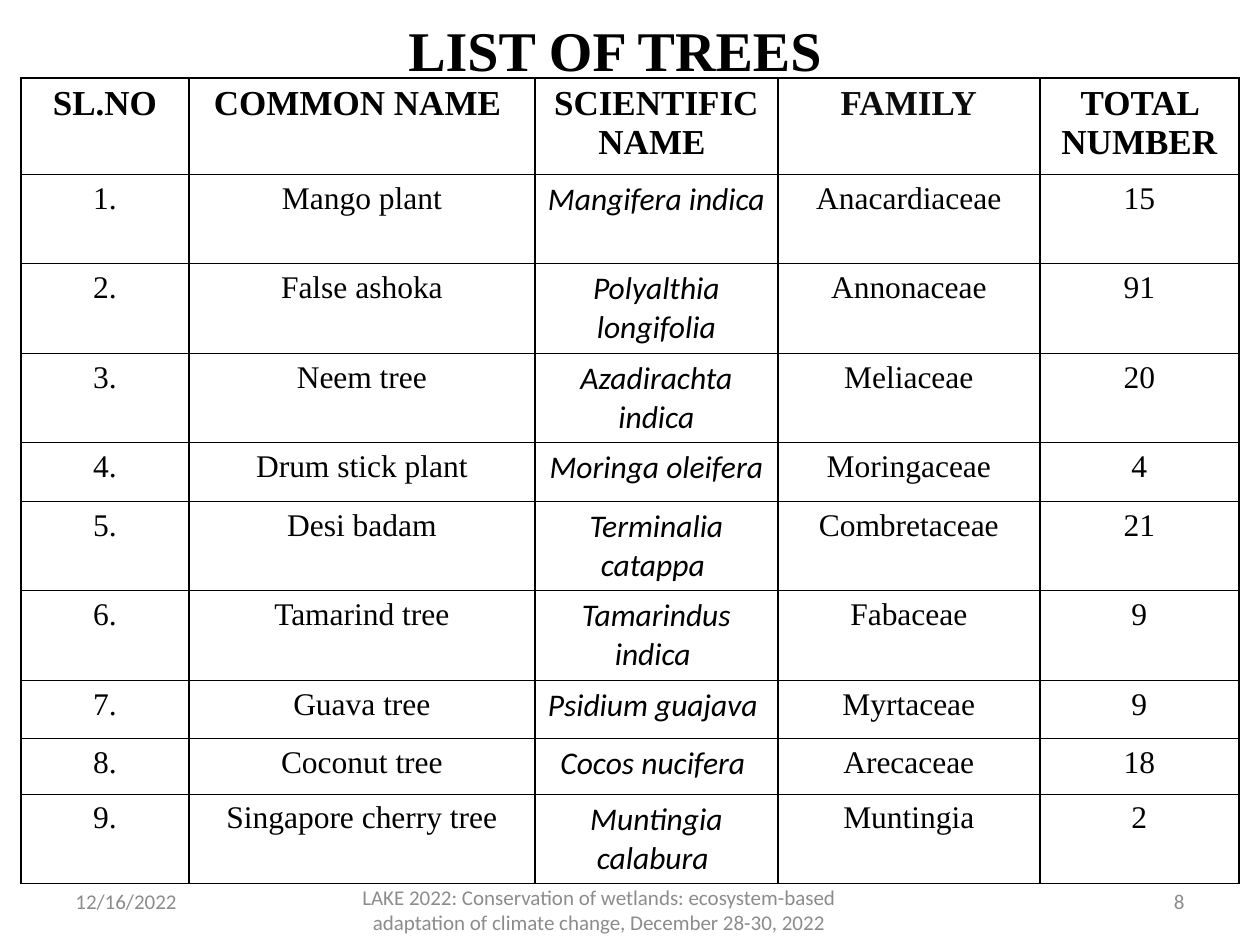
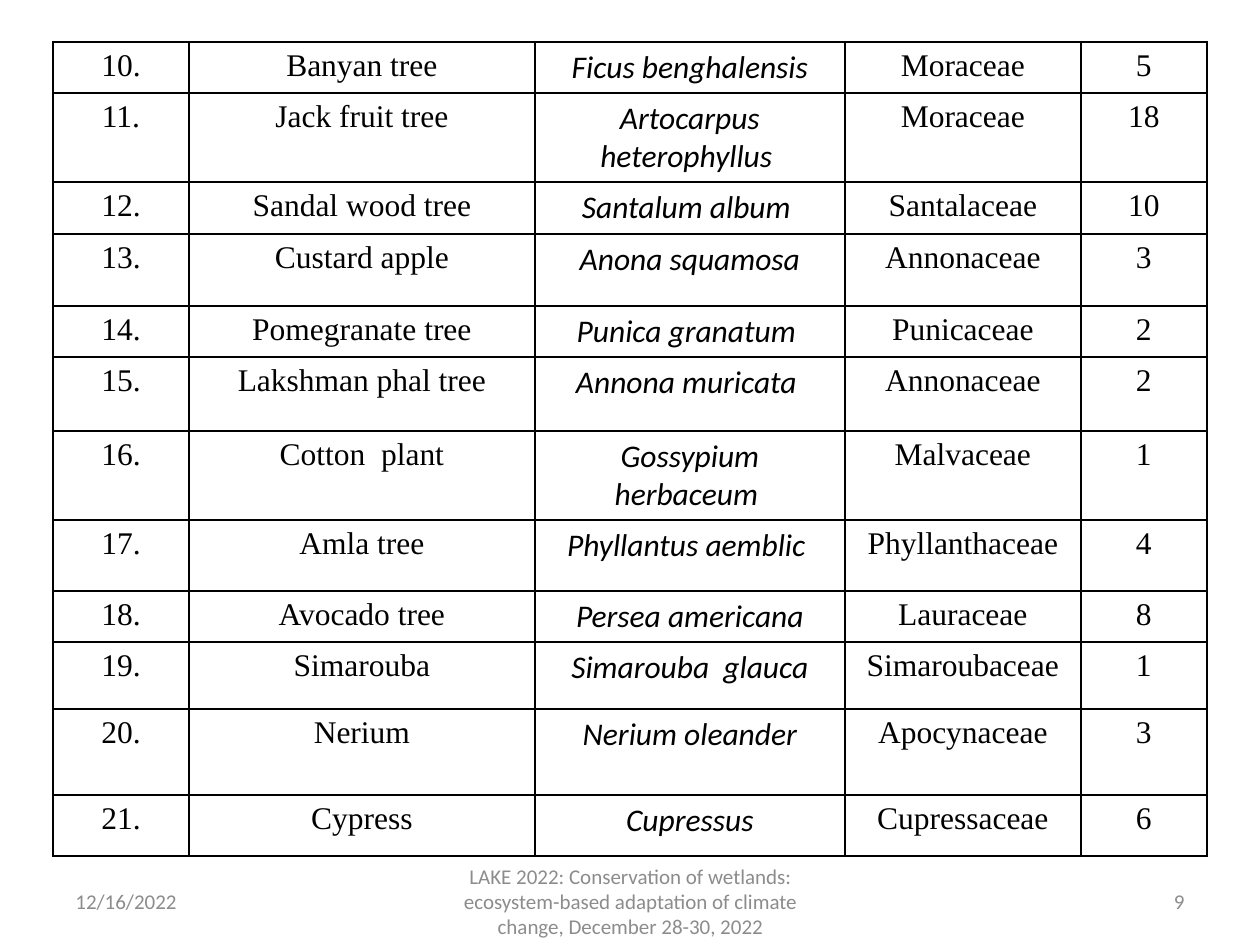
"""Build the two slides that list trees, as bordered tables with footers."""
from dataclasses import dataclass

from lxml import etree
from pptx import Presentation
from pptx import util as u
from pptx.dml import color
from pptx.enum import text
from pptx.oxml import ns


@dataclass(frozen=True)
class Theme:
    """Fonts, colours and type sizes that the slides share."""
    serif: str = "Times New Roman"
    sans: str = "Calibri"
    ink: str = "000000"
    soft_ink: str = "0D0D0D"
    muted: str = "8C8C8C"
    title: int = 32
    header: int = 20
    body: int = 18
    footer: int = 12
    border: int = 1


THEME = Theme()
PX_PER_INCH = 126
ALIGN = text.PP_ALIGN
EVENT = ("LAKE 2022: Conservation of wetlands: ecosystem-based adaptation "
         "of climate change, December 28-30, 2022")
DATE = "12/16/2022"
FAMILY = "FAMILY"
HEADERS = ("SL.NO", "COMMON NAME ", "SCIENTIFIC NAME ", FAMILY, "TOTAL NUMBER")
SCIENTIFIC_COLUMN = 2

TREES = [
    ("Mango plant", "Mangifera indica ", "Anacardiaceae", 15),
    ("False ashoka", "Polyalthia longifolia", "Annonaceae", 91),
    ("Neem tree", "Azadirachta indica", "Meliaceae", 20),
    ("Drum stick plant", "Moringa oleifera", "Moringaceae", 4),
    ("Desi badam", "Terminalia catappa ", "Combretaceae", 21),
    ("Tamarind tree", "Tamarindus indica ", "Fabaceae", 9),
    ("Guava tree", "Psidium guajava ", "Myrtaceae", 9),
    ("Coconut tree", "Cocos nucifera ", "Arecaceae", 18),
    ("Singapore cherry tree", "Muntingia calabura ", "Muntingia", 2),
    ("Banyan tree", "Ficus benghalensis", "Moraceae", 5),
    ("Jack fruit tree", "Artocarpus heterophyllus ", "Moraceae", 18),
    ("Sandal wood tree", "Santalum album ", "Santalaceae", 10),
    ("Custard apple", "Anona squamosa", "Annonaceae", 3),
    ("Pomegranate tree", "Punica granatum ", "Punicaceae", 2),
    ("Lakshman phal tree", "Annona muricata ", "Annonaceae", 2),
    ("Cotton  plant", "Gossypium herbaceum ", "Malvaceae", 1),
    ("Amla tree", "Phyllantus aemblic ", "Phyllanthaceae", 4),
    ("Avocado tree", "Persea americana", "Lauraceae", 8),
    ("Simarouba", "Simarouba  glauca", "Simaroubaceae", 1),
    ("Nerium", "Nerium oleander", "Apocynaceae", 3),
    ("Cypress", "Cupressus", "Cupressaceae", 6),
]
FIRST_PAGE_TREES = 9


def px(n):
    """Turn px into EMU."""
    return u.Emu(round(n * 914400 / PX_PER_INCH))


def write(tf, words, size, font=THEME.serif, ink=THEME.ink, align=ALIGN.CENTER,
          bold=False, italic=False):
    """Write one styled paragraph into a text frame."""
    p = tf.paragraphs[0]
    p.text = words
    p.alignment = align
    p.font.name, p.font.size = font, u.Pt(size)
    p.font.bold, p.font.italic = bold, italic
    p.font.color.rgb = color.RGBColor.from_string(ink)


def add_text(s, box, words, size, **style):
    """Add a wrapping, vertically centred text box and return its frame."""
    tf = s.shapes.add_textbox(*map(px, box)).text_frame
    tf.word_wrap = True
    tf.vertical_anchor = text.MSO_ANCHOR.MIDDLE
    write(tf, words, size, **style)
    return tf


def add_title(s, words):
    """Add the heading, set slightly left of centre by its right inset."""
    tf = add_text(s, (63, -30, 1134, 158), words, THEME.title, bold=True)
    tf.margin_right = px(42)


def add_footer(s, number, event_box):
    """Add the date, the event name and the slide number."""
    for box, words, align in (
            ((63, 876, 294, 50), DATE, ALIGN.LEFT),
            (event_box, EVENT, ALIGN.CENTER),
            ((903, 876, 294, 50), str(number), ALIGN.RIGHT)):
        add_text(s, box, words, THEME.footer, font=THEME.sans,
                 ink=THEME.muted, align=align)


def outline(cell):
    """Give a cell four solid borders and no fill."""
    tc_pr = cell._tc.get_or_add_tcPr()
    for side in ("lnL", "lnR", "lnT", "lnB"):
        ln = etree.SubElement(tc_pr, ns.qn(f"a:{side}"), w=str(u.Pt(THEME.border)))
        fill = etree.SubElement(ln, ns.qn("a:solidFill"))
        etree.SubElement(fill, ns.qn("a:srgbClr"), val=THEME.ink)
    cell.fill.background()


def cell_style(words, column, is_header):
    """Choose the type style for a table cell."""
    if is_header:
        ink = THEME.soft_ink if words == FAMILY else THEME.ink
        return dict(size=THEME.header, bold=True, ink=ink)
    if column == SCIENTIFIC_COLUMN:
        return dict(size=THEME.body, font=THEME.sans, italic=True)
    return dict(size=THEME.body)


def add_tree_table(s, left, top, widths, heights, rows):
    """Add a bordered table of trees, with a header if the rows hold one."""
    frame = s.shapes.add_table(len(rows), len(widths), px(left), px(top),
                               px(sum(widths)), px(sum(heights)))
    table = frame.table
    table.first_row = table.horz_banding = False
    for column, width in zip(table.columns, widths):
        column.width = px(width)
    for row, height in zip(table.rows, heights):
        row.height = px(height)
    for i, row in enumerate(rows):
        for j, words in enumerate(row):
            cell = table.cell(i, j)
            outline(cell)
            write(cell.text_frame, str(words),
                  **cell_style(words, j, row is HEADERS))


def main():
    """Build and save the slides."""
    prs = Presentation()
    prs.slide_width, prs.slide_height = px(1260), px(945)
    blank = prs.slide_layouts[6]
    rows = [(f"{n}.", *tree) for n, tree in enumerate(TREES, 1)]

    s = prs.slides.add_slide(blank)
    add_title(s, "LIST OF TREES")
    add_tree_table(s, 21, 78, (168, 346, 243, 262, 199),
                   (94, 89, 90, 89, 59, 89, 90, 58, 56, 89),
                   [HEADERS, *rows[:FIRST_PAGE_TREES]])
    add_footer(s, 8, (305, 885, 588, 50))

    s = prs.slides.add_slide(blank)
    add_tree_table(s, 53, 42, (136, 346, 310, 236, 126),
                   (51, 89, 52, 72, 51, 74, 89, 71, 51, 67, 86, 61),
                   rows[FIRST_PAGE_TREES:])
    add_footer(s, 9, (431, 876, 399, 50))

    prs.save("out.pptx")


if __name__ == "__main__":
    main()
